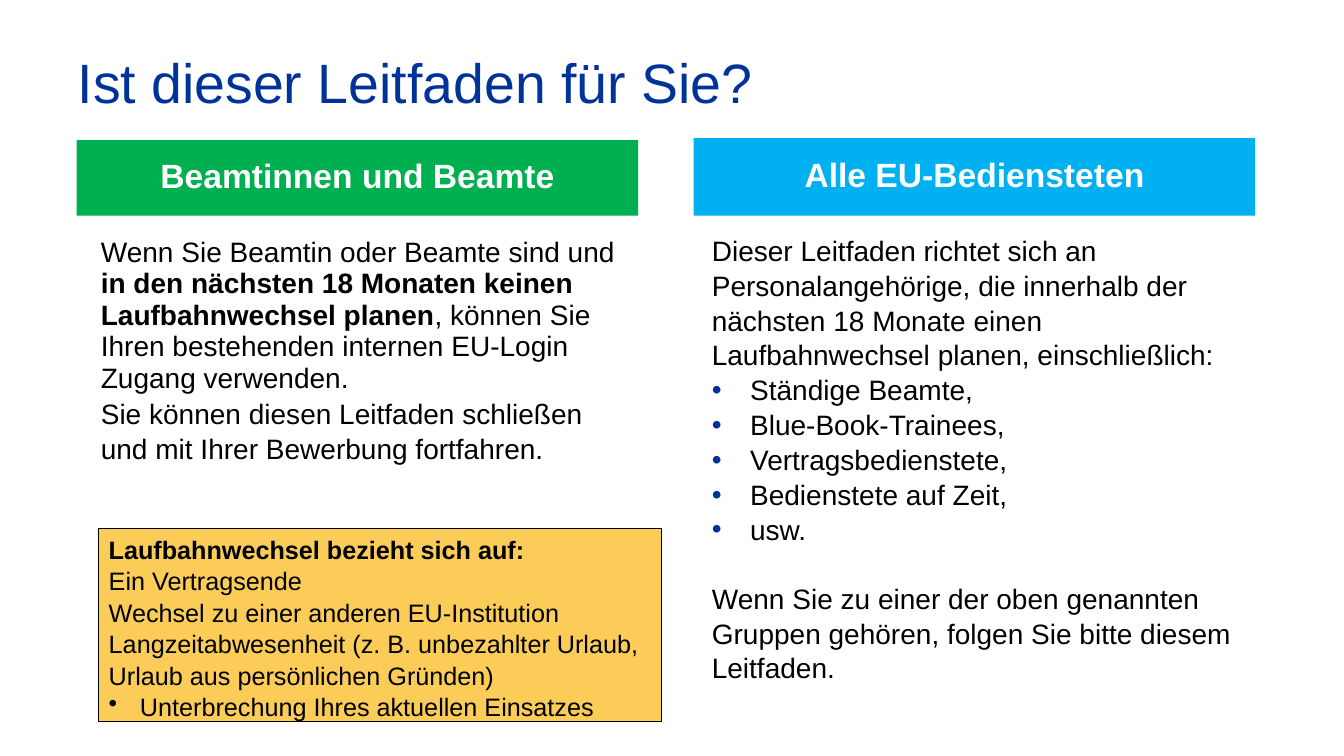
from lxml.etree import SubElement
from pptx import Presentation
from pptx.dml.color import RGBColor
from pptx.enum.shapes import MSO_SHAPE
from pptx.enum.text import MSO_ANCHOR, MSO_AUTO_SIZE, PP_ALIGN
from pptx.oxml.ns import qn
from pptx.util import Inches, Pt

NAVY = RGBColor(0x00, 0x33, 0x99)
GREEN = RGBColor(0x00, 0xB0, 0x50)
SKY = RGBColor(0x00, 0xB0, 0xF0)
AMBER = RGBColor(0xFB, 0xCD, 0x58)
BLACK = RGBColor(0x00, 0x00, 0x00)
WHITE = RGBColor(0xFF, 0xFF, 0xFF)


def apply(target, values):
    for name, value in values.items():
        setattr(target, name, value)


def place(shape, box):
    apply(shape, dict(zip(("left", "top", "width", "height"), map(Inches, box))))


def set_frame(shape, inset, anchor=MSO_ANCHOR.TOP, auto_size=MSO_AUTO_SIZE.NONE):
    frame = shape.text_frame
    side, edge = map(Inches, inset)
    apply(frame, {
        "word_wrap": True, "auto_size": auto_size, "vertical_anchor": anchor,
        "margin_left": side, "margin_right": side,
        "margin_top": edge, "margin_bottom": edge,
    })
    return frame


def set_bullet(paragraph, indent, color):
    properties = paragraph._p.get_or_add_pPr()
    properties.set("marL", str(Inches(indent)))
    properties.set("indent", str(-Inches(indent)))
    if indent:
        fill = SubElement(properties, qn("a:buClr"))
        SubElement(fill, qn("a:srgbClr")).set("val", str(color))
        SubElement(properties, qn("a:buChar")).set("char", "•")
    else:
        SubElement(properties, qn("a:buNone"))


def write(frame, index, runs, size, color, spacing, before=0,
          align=PP_ALIGN.LEFT, indent=0, bullet_color=BLACK):
    paragraph = frame.paragraphs[0] if index == 0 else frame.add_paragraph()
    set_bullet(paragraph, indent, bullet_color)
    apply(paragraph, {"alignment": align, "line_spacing": spacing,
                      "space_before": Pt(before), "space_after": Pt(0)})
    for words, bold in runs:
        run = paragraph.add_run()
        run.text = words
        apply(run.font, {"name": "Arial", "size": Pt(size), "bold": bold})
        run.font.color.rgb = color


def add_title(title, box):
    place(title, box)
    frame = set_frame(title, (0.1, 0.05), MSO_ANCHOR.MIDDLE)
    write(frame, 0, [("Ist dieser Leitfaden für Sie?", False)], 39.6, NAVY, 0.9)


def add_heading(heading, box, words, color):
    place(heading, box)
    heading.fill.solid()
    heading.fill.fore_color.rgb = color
    frame = set_frame(heading, (0.08, 0.08), MSO_ANCHOR.MIDDLE)
    write(frame, 0, [(words, True)], 24, WHITE, 0.9, align=PP_ALIGN.CENTER)


def add_officials(body, box):
    place(body, box)
    frame = set_frame(body, (0.16, 0.16))
    write(frame, 0, [
        ("Wenn Sie Beamtin oder Beamte sind und ", False),
        ("in den nächsten 18 Monaten keinen Laufbahnwechsel planen", True),
        (", können Sie Ihren bestehenden internen EU-Login Zugang verwenden.", False),
    ], 20, BLACK, 0.94)
    write(frame, 1, [("Sie können diesen Leitfaden schließen und mit Ihrer "
                      "Bewerbung fortfahren.", False)], 20, BLACK, 1.04)


def add_all_staff(body, box):
    place(body, box)
    frame = set_frame(body, (0.16, 0.16))
    groups = ["Ständige Beamte,", "Blue-Book-Trainees,", "Vertragsbedienstete,",
              "Bedienstete auf Zeit,", "usw."]
    write(frame, 0, [("Dieser Leitfaden richtet sich an Personalangehörige, die "
                      "innerhalb der nächsten 18 Monate einen Laufbahnwechsel "
                      "planen, einschließlich:", False)], 20, BLACK, 1.04)
    for index, group in enumerate(groups, 1):
        write(frame, index, [(group, False)], 20, BLACK, 1.04,
              indent=0.38, bullet_color=NAVY)
    write(frame, len(groups) + 1,
          [("Wenn Sie zu einer der oben genannten Gruppen gehören, folgen Sie "
            "bitte diesem Leitfaden.", False)], 20, BLACK, 1.04, before=24)


def add_definition(slide, box):
    definition = slide.shapes.add_shape(MSO_SHAPE.RECTANGLE, *map(Inches, box))
    definition.shadow.inherit = False
    definition.fill.solid()
    definition.fill.fore_color.rgb = AMBER
    definition.line.color.rgb = BLACK
    definition.line.width = Pt(1)
    frame = set_frame(definition, (0.1, 0.05),
                      auto_size=MSO_AUTO_SIZE.SHAPE_TO_FIT_TEXT)
    lines = [
        ("Laufbahnwechsel bezieht sich auf:", True, 0),
        ("Ein Vertragsende", False, 0),
        ("Wechsel zu einer anderen EU-Institution", False, 0),
        ("Langzeitabwesenheit (z. B. unbezahlter Urlaub, Urlaub aus "
         "persönlichen Gründen)", False, 0),
        ("Unterbrechung Ihres aktuellen Einsatzes", False, 0.31),
    ]
    for index, (words, bold, indent) in enumerate(lines):
        write(frame, index, [(words, bold)], 18, BLACK, 1.04, indent=indent)


def main():
    deck = Presentation()
    apply(deck, {"slide_width": Inches(13.33), "slide_height": Inches(7.5)})
    slide = deck.slides.add_slide(deck.slide_layouts[4])
    title, left_heading, left_body, right_heading, right_body = slide.placeholders
    add_title(title, (0.67, 0.4, 7.11, 0.89))
    add_heading(left_heading, (0.76, 1.39, 5.57, 0.75), "Beamtinnen und Beamte", GREEN)
    add_officials(left_body, (0.84, 2.19, 5.49, 2.77))
    add_heading(right_heading, (6.88, 1.37, 5.57, 0.77), "Alle EU-Bediensteten", SKY)
    add_all_staff(right_body, (6.9, 2.14, 5.56, 4.79))
    add_definition(slide, (0.98, 5.24, 5.58, 1.92))
    deck.save("out.pptx")


if __name__ == "__main__":
    main()
